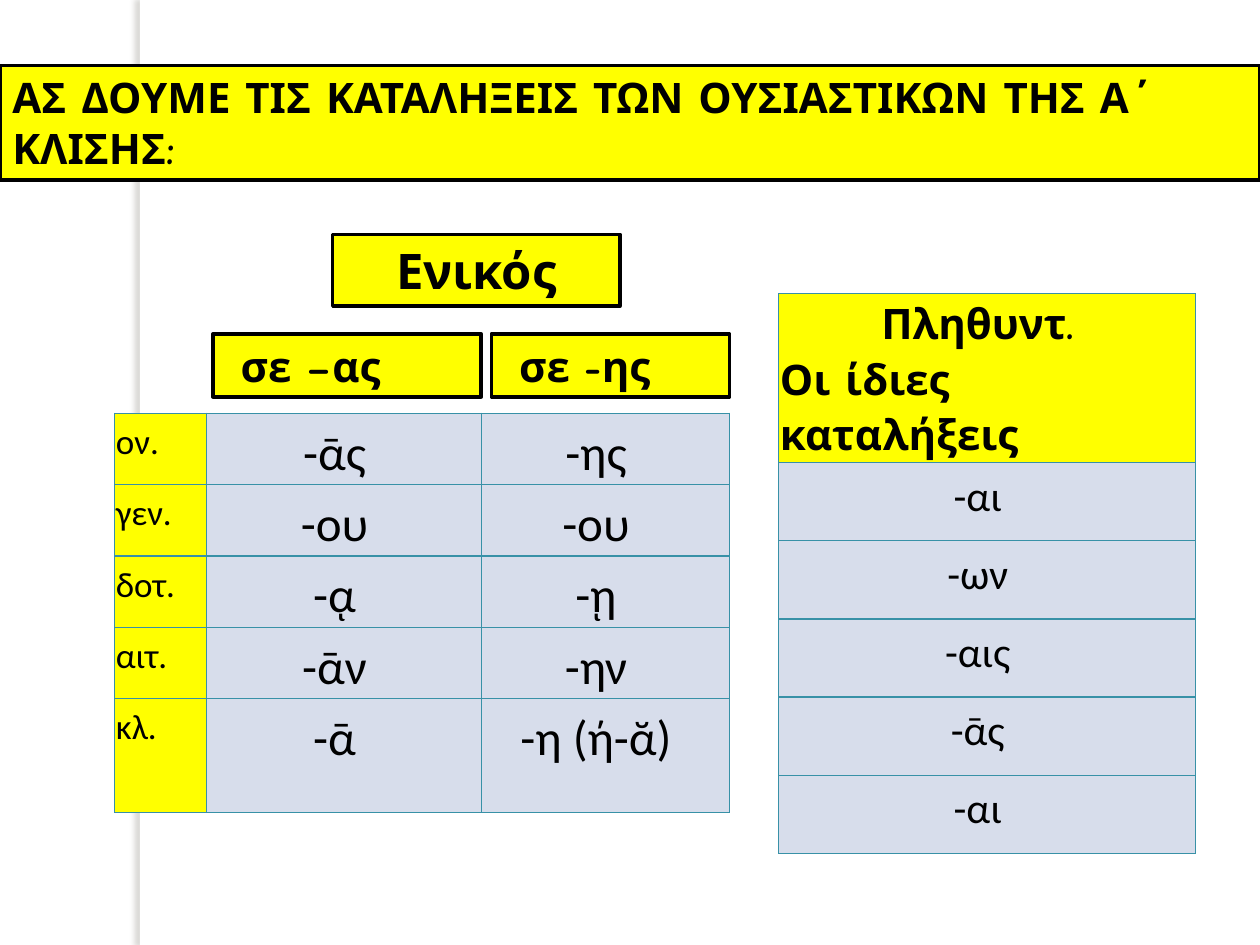
import pptx
import pptx.dml.color
import pptx.enum.shapes
import pptx.enum.text
import pptx.oxml
import pptx.oxml.ns
import pptx.util
from pptx.util import Inches

ALIGN = pptx.enum.text.PP_ALIGN
YELLOW, PALE, BORDER, BLACK = "FFFF00", "D7DDEB", "3891A7", "000000"
HEADING, BODY = "Comic Neue", "Calibri"

# text, (left, top, width, height), size, alignment, left inset
LABELS = [
    ("Ενικός", (2.64, 1.86, 2.28, 0.57), 28, ALIGN.CENTER, 0.1),
    ("σε –ας", (1.69, 2.65, 2.13, 0.5), 24, ALIGN.LEFT, 0.22),
    ("σε -ης", (3.9, 2.65, 1.89, 0.5), 24, ALIGN.LEFT, 0.22),
    ("ΑΣ ΔΟΥΜΕ ΤΙΣ ΚΑΤΑΛΗΞΕΙΣ ΤΩΝ ΟΥΣΙΑΣΤΙΚΩΝ ΤΗΣ Α΄ ΚΛΙΣΗΣ:",
     (0, 0.52, 10, 0.91), 24, ALIGN.LEFT, 0.1),
]
SINGULAR = [
    ("ον.", "-ᾱς", "-ης"),
    ("γεν.", "-ου", "-ου"),
    ("δοτ.", "-ᾳ", "-ῃ"),
    ("αιτ.", "-ᾱν", "-ην"),
    ("κλ.", "-ᾱ", "-η (ή-ᾰ)"),
]
PLURAL_HEADING = [("Πληθυντ.", ALIGN.CENTER), ("Οι ίδιες καταλήξεις", ALIGN.LEFT)]
PLURAL = ["-αι", "-ων", "-αις", "-ᾱς", "-αι"]


def color(value):
    return pptx.dml.color.RGBColor.from_string(value)


def paint(target, value):
    target.fill.solid()
    target.fill.fore_color.rgb = color(value)


def write(para, text, size, font, bold, align):
    para.alignment = align
    span = para.add_run()
    span.text = text
    span.font.size = pptx.util.Pt(size)
    span.font.name = font
    span.font.bold = bold
    span.font.color.rgb = color(BLACK)


def add_side_strip(page):
    """White strip that casts a soft shadow to its left."""
    strip = page.shapes.add_shape(pptx.enum.shapes.MSO_SHAPE.RECTANGLE,
                                  Inches(1.11), 0, Inches(0.08), Inches(7.5))
    paint(strip, "FFFFFF")
    strip.line.fill.background()
    strip.shadow.inherit = False
    effects = strip.fill._xPr.find(pptx.oxml.ns.qn("a:effectLst"))
    effects.append(pptx.oxml.parse_xml(
        f'<a:outerShdw {pptx.oxml.ns.nsdecls("a")} blurRad="38100" dist="38100" '
        'dir="10800000" algn="tl" rotWithShape="0"><a:srgbClr val="736F63">'
        '<a:alpha val="25000"/></a:srgbClr></a:outerShdw>'))


def add_label(page, text, place, size, align, inset):
    box = page.shapes.add_textbox(*map(Inches, place))
    paint(box, YELLOW)
    box.line.color.rgb = color(BLACK)
    box.line.width = pptx.util.Pt(2)
    frame = box.text_frame
    frame.word_wrap = True
    frame.auto_size = pptx.enum.text.MSO_AUTO_SIZE.SHAPE_TO_FIT_TEXT
    frame.margin_left = Inches(inset)
    write(frame.paragraphs[0], text, size, HEADING, True, align)


def add_grid(page, left, top, widths, heights):
    table = page.shapes.add_table(len(heights), len(widths), Inches(left), Inches(top),
                                  Inches(sum(widths)), Inches(sum(heights))).table
    table.first_row = table.horz_banding = False
    for column, width in zip(table.columns, widths):
        column.width = Inches(width)
    for row, height in zip(table.rows, heights):
        row.height = Inches(height)
    return table


def fill_cell(cell, lines, size, font, bold, fill):
    """Lines are (text, alignment) pairs, one paragraph each."""
    cell.margin_left = cell.margin_top = cell.margin_bottom = Inches(0.01)
    cell.margin_right = Inches(0.16)
    frame = cell.text_frame
    for index, (text, align) in enumerate(lines):
        para = frame.add_paragraph() if index else frame.paragraphs[0]
        para.line_spacing = 1.15
        write(para, text, size, font, bold, align)
    properties = cell._tc.get_or_add_tcPr()
    for side in ("lnL", "lnR", "lnT", "lnB"):
        properties.append(pptx.oxml.parse_xml(
            f'<a:{side} {pptx.oxml.ns.nsdecls("a")} w="9525"><a:solidFill>'
            f'<a:srgbClr val="{BORDER}"/></a:solidFill></a:{side}>'))
    paint(cell, fill)


def add_singular(page):
    table = add_grid(page, 0.91, 3.28, [0.73, 2.18, 1.97], [0.55] * 4 + [0.9])
    for row, (case, *endings) in enumerate(SINGULAR):
        fill_cell(table.cell(row, 0), [(case, ALIGN.JUSTIFY)], 20, BODY, False, YELLOW)
        for column, ending in enumerate(endings, 1):
            fill_cell(table.cell(row, column), [(ending, ALIGN.CENTER)],
                      28, BODY, False, PALE)


def add_plural(page):
    table = add_grid(page, 6.18, 2.33, [3.31], [1] + [0.62] * len(PLURAL))
    fill_cell(table.cell(0, 0), PLURAL_HEADING, 24, HEADING, True, YELLOW)
    for row, ending in enumerate(PLURAL, 1):
        fill_cell(table.cell(row, 0), [(ending, ALIGN.CENTER)], 24, BODY, False, PALE)


def main():
    deck = pptx.Presentation()
    deck.slide_width, deck.slide_height = Inches(10), Inches(7.5)
    page = deck.slides.add_slide(deck.slide_layouts[6])
    add_side_strip(page)
    add_singular(page)
    add_plural(page)
    for label in LABELS:
        add_label(page, *label)
    deck.save("out.pptx")


if __name__ == "__main__":
    main()
